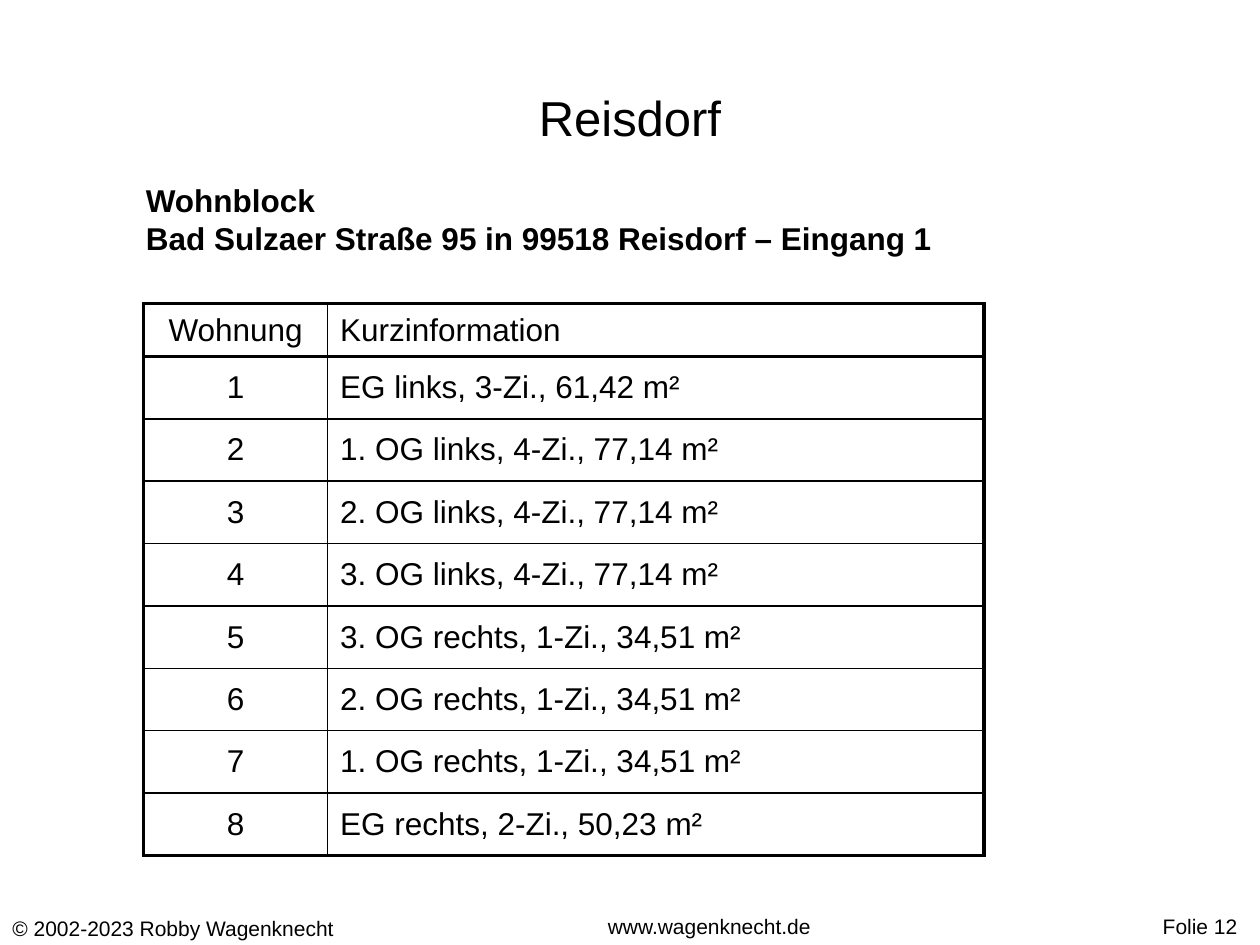
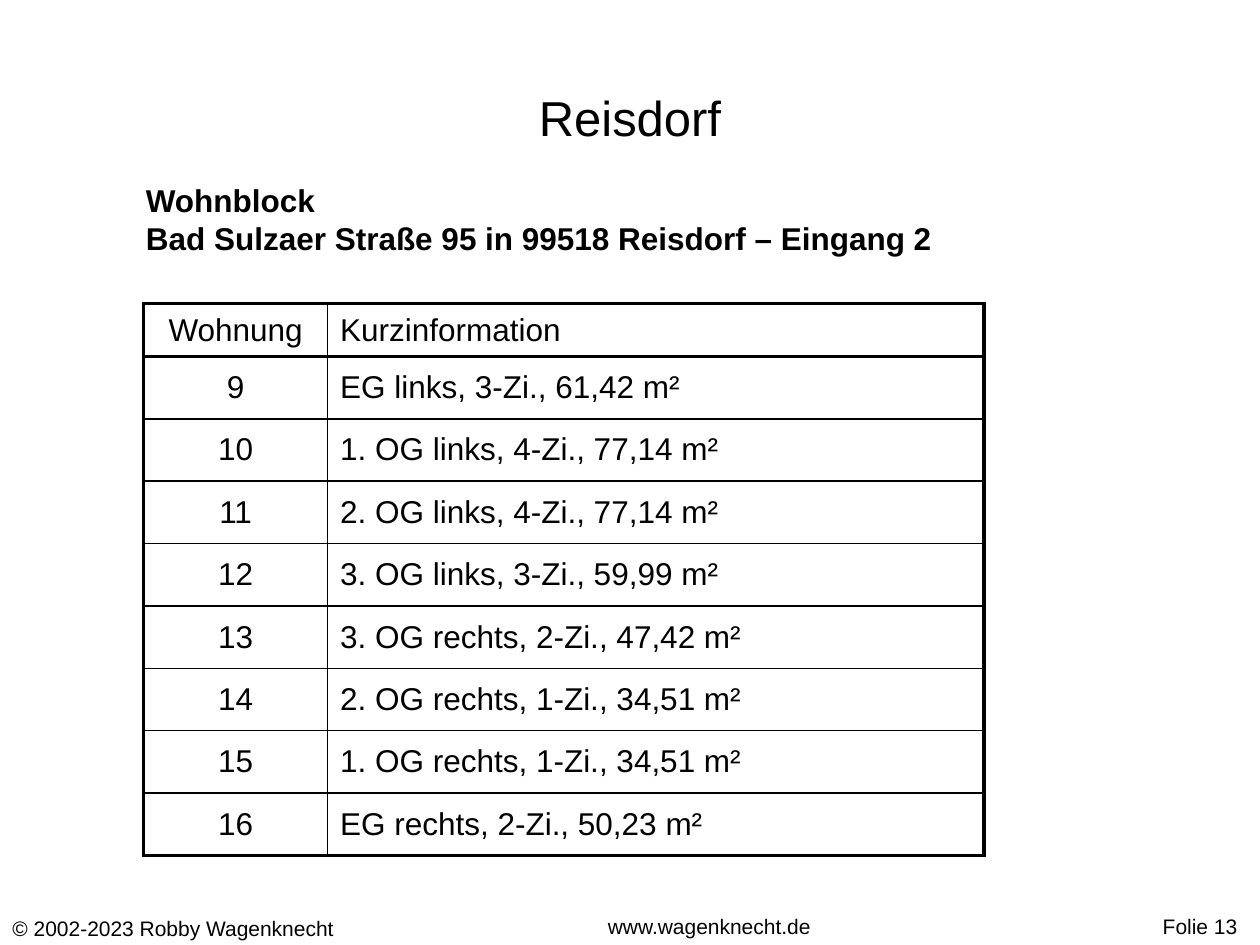
from lxml.etree import SubElement
from pptx import Presentation
from pptx.dml.color import RGBColor
from pptx.enum.text import MSO_ANCHOR, PP_ALIGN
from pptx.oxml.ns import qn
from pptx.util import Inches, Pt

BLACK = RGBColor(0x00, 0x00, 0x00)
FONT = "Arial"
THICK, THIN = Pt(2.25), Pt(1)
TABLE_HEIGHT, HEADER_HEIGHT = Inches(4.38), Inches(0.42)
COLUMN_WIDTHS = (Inches(1.46), Inches(5.21))
ALIGNMENTS = (PP_ALIGN.CENTER, PP_ALIGN.LEFT)
HEADINGS = ("Wohnung", "Kurzinformation")

# Entrance number, number of its first flat, descriptions of its flats
ENTRANCES = [
    (1, 1, [
        "EG links, 3-Zi., 61,42 m²",
        "1. OG links, 4-Zi., 77,14 m²",
        "2. OG links, 4-Zi., 77,14 m²",
        "3. OG links, 4-Zi., 77,14 m²",
        "3. OG rechts, 1-Zi., 34,51 m²",
        "2. OG rechts, 1-Zi., 34,51 m²",
        "1. OG rechts, 1-Zi., 34,51 m²",
        "EG rechts, 2-Zi., 50,23 m²",
    ]),
    (2, 9, [
        "EG links, 3-Zi., 61,42 m²",
        "1. OG links, 4-Zi., 77,14 m²",
        "2. OG links, 4-Zi., 77,14 m²",
        "3. OG links, 3-Zi., 59,99 m²",
        "3. OG rechts, 2-Zi., 47,42 m²",
        "2. OG rechts, 1-Zi., 34,51 m²",
        "1. OG rechts, 1-Zi., 34,51 m²",
        "EG rechts, 2-Zi., 50,23 m²",
    ]),
]
FIRST_SLIDE_NUMBER = 12


def style_paragraph(paragraph, size, alignment=PP_ALIGN.LEFT, bold=False):
    paragraph.alignment = alignment
    font = paragraph.font
    font.name, font.size, font.bold = FONT, Pt(size), bold
    font.color.rgb = BLACK


def add_text(slide, lines, left, top, width, height, size,
             alignment=PP_ALIGN.LEFT, bold=False, anchor=MSO_ANCHOR.TOP):
    box = slide.shapes.add_textbox(Inches(left), Inches(top), Inches(width), Inches(height))
    frame = box.text_frame
    frame.word_wrap = True
    frame.vertical_anchor = anchor
    frame.text = "\n".join(lines)
    for paragraph in frame.paragraphs:
        style_paragraph(paragraph, size, alignment, bold)


def add_footer(slide, number):
    add_text(slide, ["© 2002-2023 Robby Wagenknecht"], 0, 7.22, 3.82, 0.3, 12)
    add_text(slide, ["www.wagenknecht.de"], 2.48, 7.2, 6.3, 0.3, 12, PP_ALIGN.CENTER)
    add_text(slide, [f"Folie {number}"], 9.13, 7.2, 0.87, 0.3, 12)


def set_borders(cell, **widths):
    """Draw the cell's sides; keys are L, R, T and B, in that order."""
    properties = cell._tc.get_or_add_tcPr()
    for side, width in widths.items():
        line = SubElement(properties, qn(f"a:ln{side}"), w=str(width))
        fill = SubElement(line, qn("a:solidFill"))
        SubElement(fill, qn("a:srgbClr"), val=str(BLACK))


def add_flat_table(slide, first_flat, descriptions):
    flats = [(str(number), text) for number, text in enumerate(descriptions, first_flat)]
    rows = [HEADINGS, *flats]
    table = slide.shapes.add_table(
        len(rows), len(HEADINGS), Inches(1.14), Inches(2.41),
        sum(COLUMN_WIDTHS), TABLE_HEIGHT).table
    table.first_row = table.horz_banding = False
    for column, width in zip(table.columns, COLUMN_WIDTHS):
        column.width = width

    last_row, last_column = len(rows) - 1, len(HEADINGS) - 1
    flat_height = (TABLE_HEIGHT - HEADER_HEIGHT) // len(flats)
    for row_index, row in enumerate(rows):
        table.rows[row_index].height = flat_height if row_index else HEADER_HEIGHT
        for column_index, text in enumerate(row):
            cell = table.cell(row_index, column_index)
            cell.text = text
            cell.vertical_anchor = MSO_ANCHOR.MIDDLE
            style_paragraph(cell.text_frame.paragraphs[0], 18, ALIGNMENTS[column_index])
            set_borders(
                cell,
                L=THICK if column_index == 0 else THIN,
                R=THICK if column_index == last_column else THIN,
                T=THICK if row_index in (0, 1) else THIN,
                B=THICK if row_index in (0, last_row) else THIN)
            cell.fill.background()


def add_entrance_slide(presentation, number, entrance, first_flat, descriptions):
    slide = presentation.slides.add_slide(presentation.slide_layouts[6])
    add_footer(slide, number)
    add_text(slide, ["Reisdorf"], 0.5, 0.3, 9, 1.25, 28,
             PP_ALIGN.CENTER, anchor=MSO_ANCHOR.MIDDLE)
    address = f"Bad Sulzaer Straße 95 in 99518 Reisdorf – Eingang {entrance}"
    add_text(slide, ["Wohnblock", address], 1.06, 1.39, 8.94, 0.7, 18, bold=True)
    add_flat_table(slide, first_flat, descriptions)


def main():
    presentation = Presentation()
    presentation.slide_width, presentation.slide_height = Inches(10), Inches(7.5)
    for number, entrance in enumerate(ENTRANCES, FIRST_SLIDE_NUMBER):
        add_entrance_slide(presentation, number, *entrance)
    presentation.save("out.pptx")


if __name__ == "__main__":
    main()
